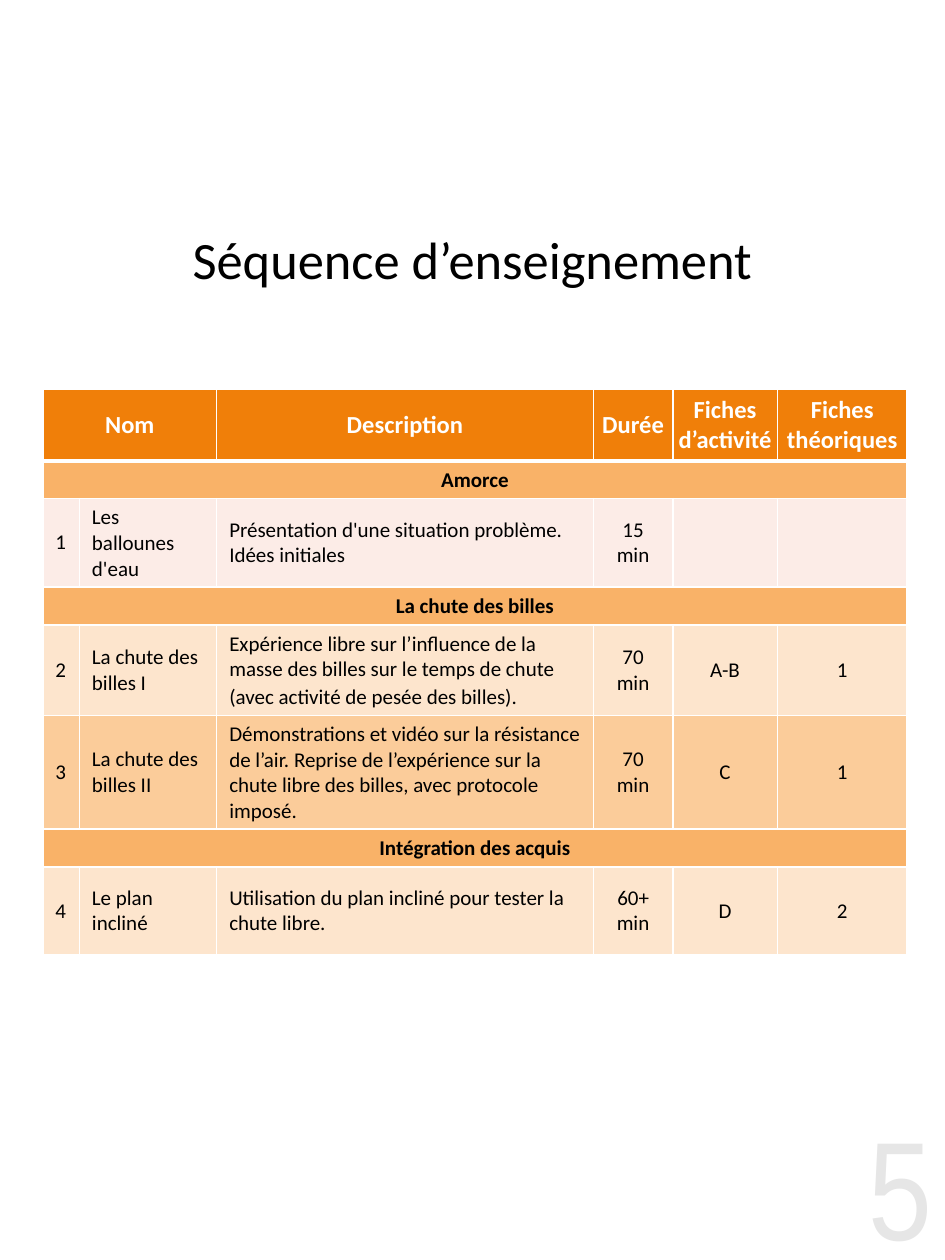
from lxml.etree import SubElement
from pptx import Presentation
from pptx.dml.color import RGBColor
from pptx.enum.text import MSO_ANCHOR, PP_ALIGN
from pptx.oxml.ns import qn
from pptx.util import Inches, Pt

WHITE = RGBColor(0xFF, 0xFF, 0xFF)
BLACK = RGBColor(0x00, 0x00, 0x00)
PALE_GRAY = RGBColor(0xE6, 0xE6, 0xE6)
ORANGE = RGBColor(0xF0, 0x7F, 0x09)
SECTION_ORANGE = RGBColor(0xF9, 0xB2, 0x68)
ROSE = RGBColor(0xFC, 0xEC, 0xE7)
LIGHT_BAND = RGBColor(0xFD, 0xE5, 0xCD)
DARK_BAND = RGBColor(0xFB, 0xCC, 0x9A)

COLUMN_WIDTHS = [0.29, 1.09, 2.99, 0.63, 0.83, 1.03]
HEADER_HEIGHT, SECTION_HEIGHT, ACTIVITY_HEIGHT = 0.5, 0.3, 0.7
HEADERS = ["Nom", "", "Description", "Durée", "Fiches d’activité", "Fiches théoriques"]

# A plain string is a section title; a tuple is an activity: fill, then its cells.
ROWS = [
    "Amorce",
    (ROSE, ["1", "Les ballounes d'eau",
            "Présentation d'une situation problème. Idées initiales",
            "15 min", "", ""]),
    "La chute des billes",
    (LIGHT_BAND, ["2", "La chute des billes I",
                  "Expérience libre sur l’influence de la masse des billes "
                  "sur le temps de chute\n(avec activité de pesée des billes).",
                  "70 min", "A-B", "1"]),
    (DARK_BAND, ["3", "La chute des billes II",
                 "Démonstrations et vidéo sur la résistance de l’air. Reprise de "
                 "l’expérience sur la chute libre des billes, avec protocole imposé.",
                 "70 min", "C", "1"]),
    "Intégration des acquis",
    (LIGHT_BAND, ["4", "Le plan incliné",
                  "Utilisation du plan incliné pour tester la chute libre.",
                  "60+ min", "D", "2"]),
]


def write_text(frame, text, size=12, color=BLACK, bold=False,
               align=PP_ALIGN.CENTER, font="Calibri"):
    """Fill a text frame, one paragraph for each line of text."""
    for index, line in enumerate(text.split("\n")):
        para = frame.add_paragraph() if index else frame.paragraphs[0]
        para.alignment = align
        if index:
            para.line_spacing = 1.1
            para.space_after = Pt(6)
        span = para.add_run()
        span.text = line
        span.font.name = font
        span.font.size = Pt(size)
        span.font.bold = bold
        span.font.color.rgb = color


def add_label(page, left, top, width, height, text, **text_format):
    box = page.shapes.add_textbox(Inches(left), Inches(top), Inches(width), Inches(height))
    frame = box.text_frame
    frame.word_wrap = True
    frame.vertical_anchor = MSO_ANCHOR.MIDDLE
    write_text(frame, text, **text_format)


def style_cell(cell, fill, top=1, bottom=1):
    """Give a cell white borders, of widths in points, and a solid fill."""
    properties = cell._tc.get_or_add_tcPr()
    for side, width in (("L", 1), ("R", 1), ("T", top), ("B", bottom)):
        line = SubElement(properties, qn(f"a:ln{side}"), w=str(Pt(width)))
        solid = SubElement(line, qn("a:solidFill"))
        SubElement(solid, qn("a:srgbClr"), val=str(WHITE))
    cell.fill.solid()
    cell.fill.fore_color.rgb = fill
    cell.vertical_anchor = MSO_ANCHOR.MIDDLE


def fill_header(table):
    table.rows[0].height = Inches(HEADER_HEIGHT)
    for column, text in enumerate(HEADERS):
        cell = table.cell(0, column)
        style_cell(cell, ORANGE, bottom=3)
        if column >= 3:
            cell.margin_left = cell.margin_right = Inches(0.04)
        if text:
            write_text(cell.text_frame, text, size=14, color=WHITE, bold=True)
    table.cell(0, 0).merge(table.cell(0, 1))


def fill_section(table, row, title):
    table.rows[row].height = Inches(SECTION_HEIGHT)
    for cell in table.rows[row].cells:
        style_cell(cell, SECTION_ORANGE, top=3 if row == 1 else 1)
    first = table.cell(row, 0)
    first.merge(table.cell(row, len(COLUMN_WIDTHS) - 1))
    write_text(first.text_frame, title, bold=True)


def fill_activity(table, row, fill, texts):
    table.rows[row].height = Inches(ACTIVITY_HEIGHT)
    for column, text in enumerate(texts):
        cell = table.cell(row, column)
        style_cell(cell, fill)
        if text:
            align = PP_ALIGN.LEFT if column < 3 else PP_ALIGN.CENTER
            write_text(cell.text_frame, text, align=align)


def add_sequence_table(page):
    frame = page.shapes.add_table(len(ROWS) + 1, len(COLUMN_WIDTHS), Inches(0.34),
                                  Inches(3.09), Inches(sum(COLUMN_WIDTHS)), Inches(4.2))
    table = frame.table
    table.horz_banding = False
    for column, width in zip(table.columns, COLUMN_WIDTHS):
        column.width = Inches(width)
    fill_header(table)
    for row, content in enumerate(ROWS, start=1):
        if isinstance(content, str):
            fill_section(table, row, content)
        else:
            fill_activity(table, row, *content)


def main():
    deck = Presentation()
    deck.slide_width, deck.slide_height = Inches(7.5), Inches(10)
    page = deck.slides.add_slide(deck.slide_layouts[6])
    add_label(page, 0, 1.66, 7.5, 0.79, "Séquence d’enseignement", size=30)
    add_sequence_table(page)
    add_label(page, 6.5, 8.8, 1, 1.2, "5", size=80, color=PALE_GRAY,
              align=PP_ALIGN.RIGHT, font="Arial Narrow")
    deck.save("out.pptx")


if __name__ == "__main__":
    main()
